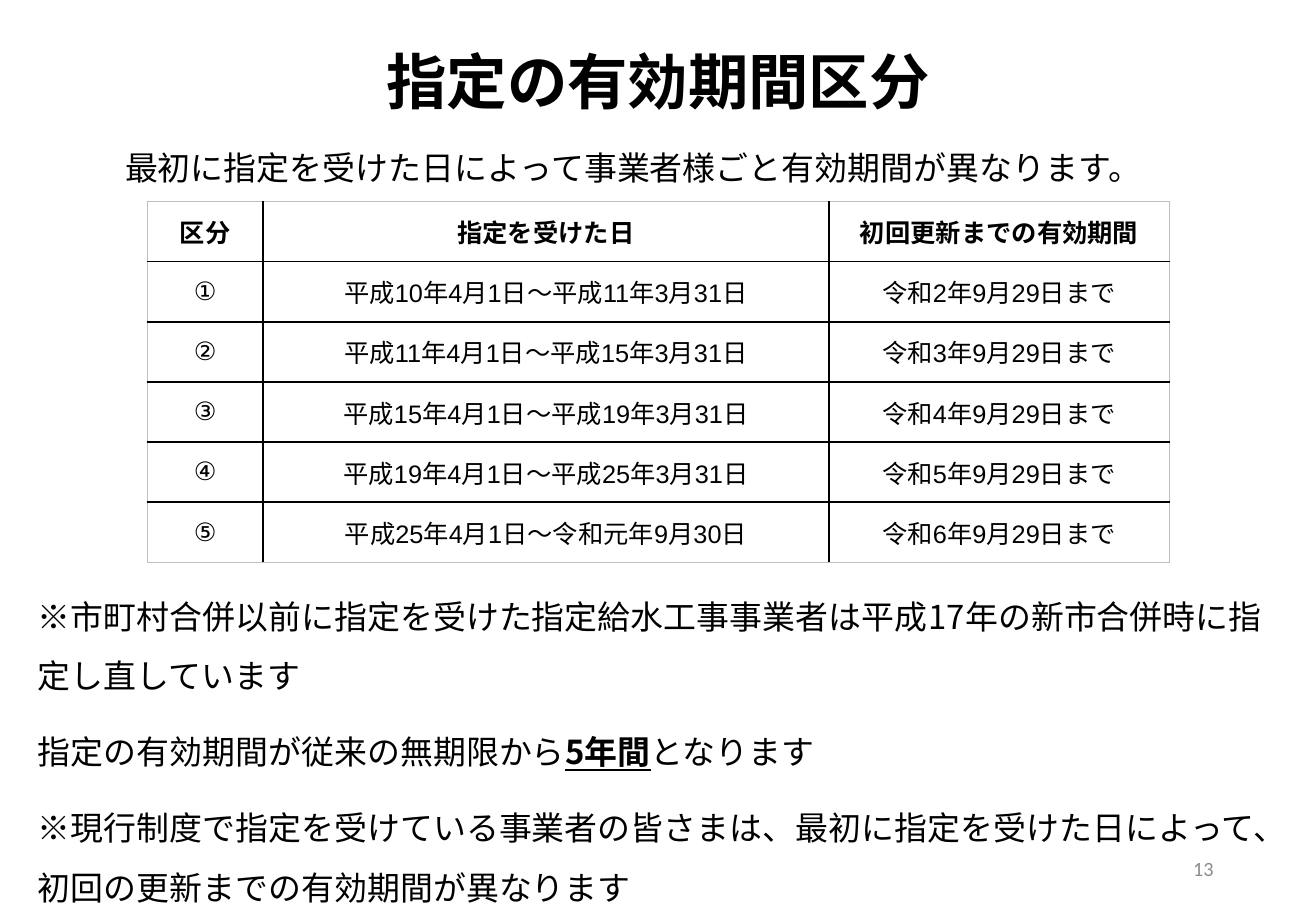
from dataclasses import dataclass

from lxml.etree import SubElement
from pptx import Presentation
from pptx.dml.color import RGBColor
from pptx.enum.text import MSO_ANCHOR, PP_ALIGN
from pptx.oxml import parse_xml
from pptx.oxml.ns import nsdecls, qn
from pptx.util import Pt


@dataclass(frozen=True)
class Theme:
    ink: str = "000000"
    muted: str = "8C8C8C"
    frame: str = "BFBFBF"
    japanese: str = "Noto Sans CJK JP"
    table_latin: str = "Arial"
    number_latin: str = "Calibri"
    title_size: float = 35.8
    body_size: float = 19.5
    table_size: float = 15
    number_size: float = 12


THEME = Theme()


def write_spans(para, spans, size=THEME.body_size, latin=THEME.japanese,
                color=THEME.ink, bold=False, align=PP_ALIGN.LEFT,
                line_spacing=None, space_before=0):
    """Fill a paragraph with plain strings or (string, emphasised) pairs."""
    para.alignment = align
    para.space_before = Pt(space_before)
    if line_spacing:
        para.line_spacing = line_spacing
    for item in [spans] if isinstance(spans, str) else spans:
        text, emphasised = (item, False) if isinstance(item, str) else item
        span = para.add_run()
        span.text = text
        font = span.font
        font.size = Pt(size)
        font.bold = bold or emphasised
        font.underline = emphasised
        font.color.rgb = RGBColor.from_string(color)
        font.name = latin
        SubElement(font._element, qn("a:ea")).set("typeface", THEME.japanese)


class SlideBuilder:
    """Holds the theme and the current page; lengths are in points."""

    def __init__(self, page, theme):
        self.page = page
        self.theme = theme

    def text(self, left, top, width, height, paragraphs,
             anchor=MSO_ANCHOR.TOP, **style):
        box = self.page.shapes.add_textbox(
            Pt(left), Pt(top), Pt(width), Pt(height))
        frame = box.text_frame
        frame.word_wrap = True
        frame.vertical_anchor = anchor
        for index, spans in enumerate(paragraphs):
            para = frame.add_paragraph() if index else frame.paragraphs[0]
            write_spans(para, spans, **style)

    def table(self, left, top, widths, row_height, rows):
        height = row_height * len(rows)
        table = self.page.shapes.add_table(
            len(rows), len(widths), Pt(left), Pt(top),
            Pt(sum(widths)), Pt(height)).table
        table.first_row = table.horz_banding = False
        for column, width in zip(table.columns, widths):
            column.width = Pt(width)
        last_row, last_column = len(rows) - 1, len(widths) - 1
        for r, values in enumerate(rows):
            table.rows[r].height = Pt(row_height)
            for c, value in enumerate(values):
                cell = table.cell(r, c)
                cell.fill.background()
                cell.vertical_anchor = MSO_ANCHOR.MIDDLE
                cell.margin_left = cell.margin_right = Pt(5.8)
                cell.margin_top = cell.margin_bottom = Pt(2.9)
                write_spans(cell.text_frame.paragraphs[0], value,
                            size=self.theme.table_size,
                            latin=self.theme.table_latin,
                            bold=r == 0, align=PP_ALIGN.CENTER)
                self.borders(cell, L=c == 0, R=c == last_column,
                             T=r == 0, B=r == last_row)

    def borders(self, cell, **outer_sides):
        """Draw four cell edges; a true side belongs to the outer frame."""
        properties = cell._tc.get_or_add_tcPr()
        for index, (side, outer) in enumerate(outer_sides.items()):
            color = self.theme.frame if outer else self.theme.ink
            properties.insert(index, parse_xml(
                f'<a:ln{side} {nsdecls("a")} w="{Pt(1)}"><a:solidFill>'
                f'<a:srgbClr val="{color}"/></a:solidFill></a:ln{side}>'))


def main():
    deck = Presentation()
    deck.slide_width, deck.slide_height = Pt(780), Pt(540)
    builder = SlideBuilder(deck.slides.add_slide(deck.slide_layouts[6]), THEME)

    builder.text(0, 8, 780, 85, ["指定の有効期間区分"],
                 anchor=MSO_ANCHOR.MIDDLE, size=THEME.title_size, bold=True,
                 align=PP_ALIGN.CENTER, line_spacing=0.9)
    builder.text(15.1, 338.4, 750.2, 201.6, [
        "※市町村合併以前に指定を受けた指定給水工事事業者は平成17年の新市合併時に指定し直しています",
        ["指定の有効期間が従来の無期限から", ("5年間", True), "となります"],
        "※現行制度で指定を受けている事業者の皆さまは、最初に指定を受けた日によって、"
        "初回の更新までの有効期間が異なります",
    ], line_spacing=1.5, space_before=10)

    periods = [
        ("①", "平成10年4月1日～平成11年3月31日"),
        ("②", "平成11年4月1日～平成15年3月31日"),
        ("③", "平成15年4月1日～平成19年3月31日"),
        ("④", "平成19年4月1日～平成25年3月31日"),
        ("⑤", "平成25年4月1日～令和元年9月30日"),
    ]
    rows = [("区分", "指定を受けた日", "初回更新までの有効期間")]
    rows += [(mark, period, f"令和{year}年9月29日まで")
             for year, (mark, period) in enumerate(periods, start=2)]
    builder.table(87.4, 119.5, [68.4, 335.5, 201.8], 35.65, rows)

    builder.text(67, 84.2, 646.6, 31,
                 ["最初に指定を受けた日によって事業者様ごと有効期間が異なります。"])
    builder.text(550.8, 500.4, 175.7, 28.8, ["13"],
                 anchor=MSO_ANCHOR.MIDDLE, size=THEME.number_size,
                 latin=THEME.number_latin, color=THEME.muted,
                 align=PP_ALIGN.RIGHT)
    deck.save("out.pptx")


if __name__ == "__main__":
    main()
